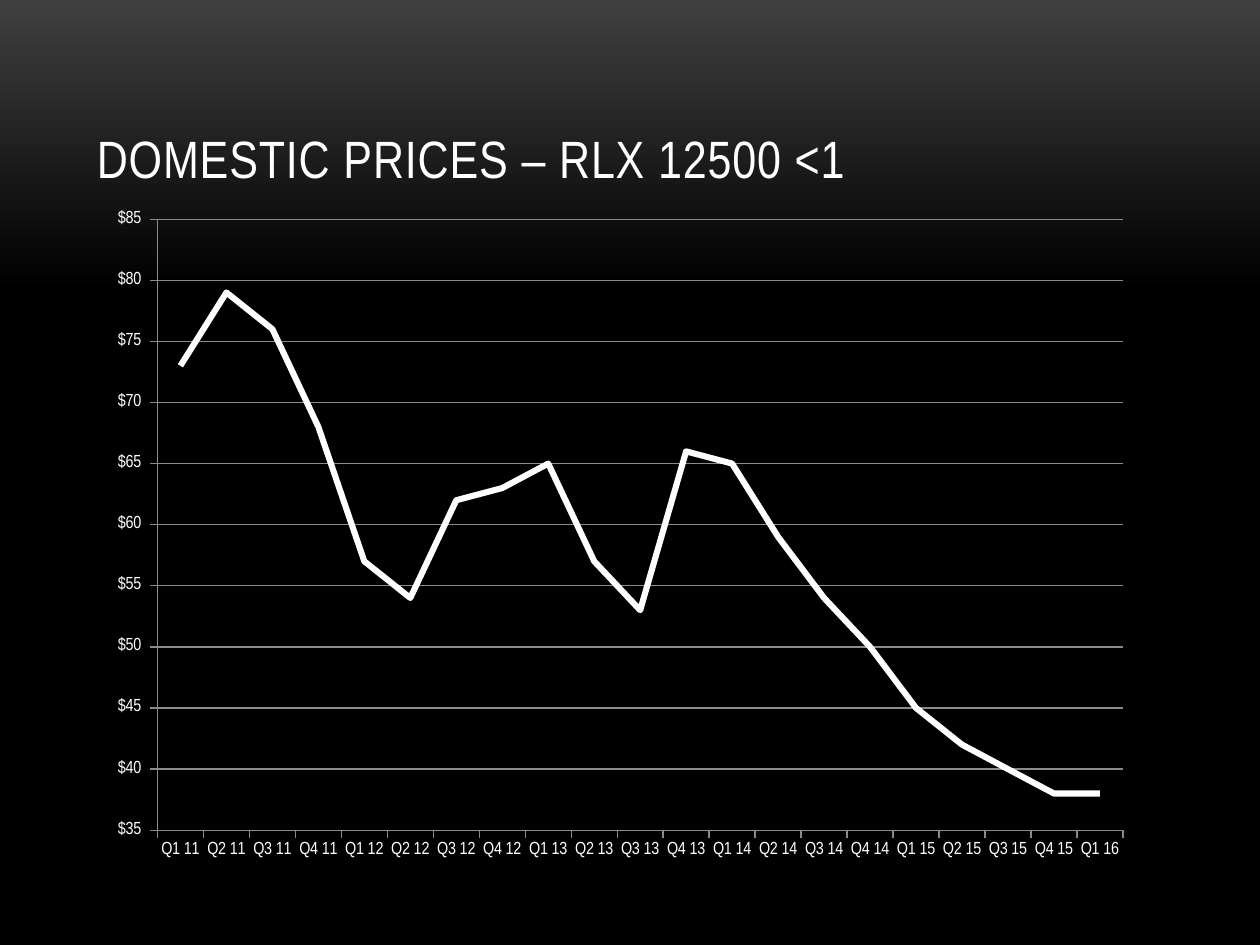
from copy import deepcopy
from dataclasses import dataclass

from lxml.etree import SubElement
from pptx import Presentation
from pptx.chart.data import CategoryChartData
from pptx.dml.color import RGBColor
from pptx.enum.chart import XL_CHART_TYPE, XL_TICK_MARK
from pptx.enum.text import MSO_ANCHOR
from pptx.oxml.ns import qn
from pptx.util import Inches, Pt


@dataclass(frozen=True)
class Theme:
    font: str = "Arial Narrow"
    text: RGBColor = RGBColor(0xFF, 0xFF, 0xFF)
    grid: RGBColor = RGBColor(0x8B, 0x8B, 0x8B)
    glow: RGBColor = RGBColor(0x3F, 0x3F, 0x3F)
    dark: RGBColor = RGBColor(0, 0, 0)
    title_size: Pt = Pt(30)
    label_size: Pt = Pt(10)


THEME = Theme()
PRICES = [73, 79, 76, 68, 57, 54, 62, 63, 65, 57, 53,
          66, 65, 59, 54, 50, 45, 42, 40, 38, 38]
QUARTERS = [f"Q{i % 4 + 1} {11 + i // 4}" for i in range(len(PRICES))]


def set_attrs(obj, values):
    for name, value in values.items():
        setattr(obj, name, value)


def set_font(font, size):
    set_attrs(font, {"name": THEME.font, "size": size, "bold": False})
    font.color.rgb = THEME.text


def set_line(line, color, width):
    line.color.rgb = color
    line.width = width


def paint_background(slide):
    fill = slide.background.fill
    fill.gradient()
    fill.gradient_angle = 270
    for stop, color, pos in zip(fill.gradient_stops, (THEME.glow, THEME.dark), (0, 0.31)):
        stop.color.rgb = color
        stop.position = pos
    # Hold the dark colour down to the bottom edge
    last = slide.element.xpath(".//p:bg//a:gs")[-1]
    end = deepcopy(last)
    end.set("pos", "100000")
    last.addnext(end)


def add_title(slide, box, text):
    tf = slide.shapes.add_textbox(*box).text_frame
    set_attrs(tf, {"word_wrap": True, "vertical_anchor": MSO_ANCHOR.BOTTOM})
    r = tf.paragraphs[0].add_run()
    r.text = text
    set_font(r.font, THEME.title_size)
    r.font.bold = None
    r.font._element.set("spc", "50")


def set_plot_area(chart, bounds):
    """Place the inner plot area as fractions of the chart."""
    plot_area = chart._chartSpace.chart.plotArea
    for old in plot_area.findall(qn("c:layout")):
        plot_area.remove(old)
    layout = SubElement(plot_area, qn("c:layout"))
    plot_area.insert(0, layout)
    manual = SubElement(layout, qn("c:manualLayout"))
    values = {"layoutTarget": "inner", "xMode": "edge", "yMode": "edge", **bounds}
    for tag, value in values.items():
        SubElement(manual, qn(f"c:{tag}")).set("val", str(value))


def add_price_chart(slide, box):
    data = CategoryChartData()
    data.categories = QUARTERS
    data.add_series("Series 1", PRICES)
    chart = slide.shapes.add_chart(XL_CHART_TYPE.LINE, *box, data).chart
    set_attrs(chart, {"has_legend": False, "has_title": False})
    set_font(chart.font, THEME.label_size)
    set_plot_area(chart, {"x": 0.06, "y": 0.03, "w": 0.92, "h": 0.91})

    # Axes and gridlines
    for axis in (chart.category_axis, chart.value_axis):
        axis.major_tick_mark = XL_TICK_MARK.OUTSIDE
        set_line(axis.format.line, THEME.grid, Pt(0.75))
    axis = chart.value_axis
    set_attrs(axis, {"minimum_scale": 35, "maximum_scale": 85, "major_unit": 5,
                     "has_major_gridlines": True})
    set_line(axis.major_gridlines.format.line, THEME.grid, Pt(0.75))
    set_attrs(axis.tick_labels, {"number_format": '"$"#,##0_)',
                                 "number_format_is_linked": False})

    # Price line
    plot = chart.plots[0]
    plot.vary_by_categories = False
    series = plot.series[0]
    series.smooth = False
    set_line(series.format.line, THEME.text, Pt(3.5))


def main():
    prs = Presentation()
    set_attrs(prs, {"slide_width": Inches(10), "slide_height": Inches(7.5)})
    slide = prs.slides.add_slide(prs.slide_layouts[6])
    paint_background(slide)
    add_title(slide, (Inches(0.67), Inches(0.3), Inches(8.67), Inches(1.25)),
              "DOMESTIC PRICES – RLX 12500 <1")
    add_price_chart(slide, (Inches(0.75), Inches(1.58), Inches(8.33), Inches(5.33)))
    prs.save("out.pptx")


if __name__ == "__main__":
    main()
